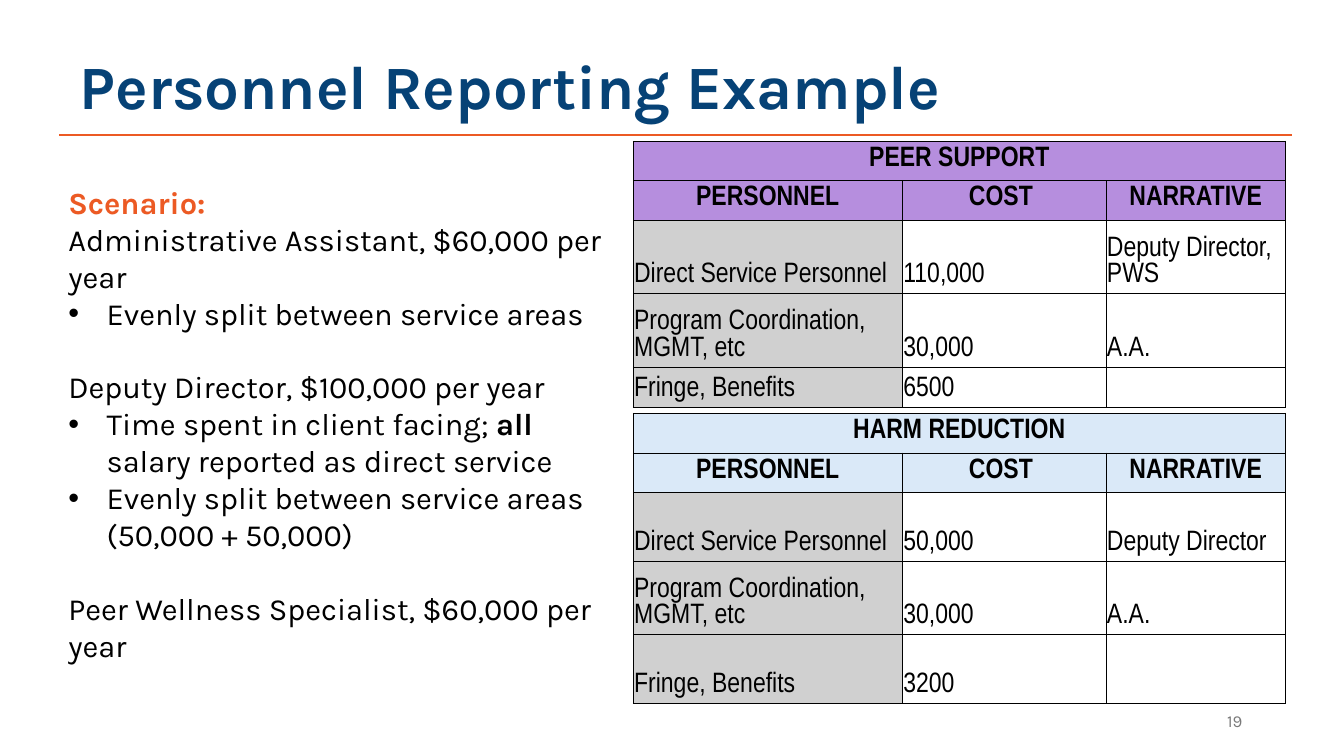
from dataclasses import dataclass

from lxml.etree import SubElement
from pptx import Presentation
from pptx.dml.color import RGBColor
from pptx.enum.shapes import MSO_CONNECTOR
from pptx.enum.text import MSO_ANCHOR, MSO_AUTO_SIZE, PP_ALIGN
from pptx.oxml.ns import qn
from pptx.util import Inches, Pt


@dataclass(frozen=True)
class Theme:
    navy: str = "064276"
    orange: str = "EC5A24"
    black: str = "000000"
    number_grey: str = "797979"
    label_grey: str = "D0D0D0"
    purple: str = "B68EDE"
    pale_blue: str = "DAE9F8"
    body_font: str = "Karla"
    table_font: str = "Arial Narrow"
    title_size: int = 44
    body_size: int = 22
    table_size: int = 20
    number_size: int = 12


@dataclass(frozen=True)
class ScenarioLine:
    text: str
    bullet: bool = False
    heading: bool = False
    starts_group: bool = False
    bold_word: str = ""


@dataclass(frozen=True)
class CostReport:
    service: str
    top: float
    header_color: str
    row_heights: tuple[float, ...]
    staff: tuple[tuple[str, str, str], ...]


THEME = Theme()
BULLET_INDENT = Inches(0.38)
REPORT_LEFT = Inches(6.28)
COLUMN_WIDTHS = (2.67, 2.02, 1.78)
COLUMN_HEADINGS = ("PERSONNEL", "COST ", "NARRATIVE")

SCENARIO = (
    ScenarioLine("Scenario:", heading=True),
    ScenarioLine("Administrative Assistant, $60,000 per year"),
    ScenarioLine("Evenly split between service areas", bullet=True),
    ScenarioLine("Deputy Director, $100,000 per year", starts_group=True),
    ScenarioLine("Time spent in client facing; all salary reported as direct service",
                 bullet=True, bold_word="all"),
    ScenarioLine("Evenly split between service areas (50,000 + 50,000)", bullet=True),
    ScenarioLine("Peer Wellness Specialist, $60,000 per year", starts_group=True),
)

REPORTS = (
    CostReport("PEER SUPPORT", 1.4, THEME.purple, (0.22, 0.22, 0.21, 0.4, 0.21), (
        ("Direct Service Personnel", "110,000", "Deputy Director, PWS"),
        ("Program Coordination, MGMT, etc", "30,000", "A.A."),
        ("Fringe, Benefits", "6500", ""),
    )),
    CostReport("HARM REDUCTION", 4.1, THEME.pale_blue, (0.37, 0.37, 0.68, 0.68, 0.68), (
        ("Direct Service Personnel", "50,000", "Deputy Director"),
        ("Program Coordination, MGMT, etc", "30,000", "A.A."),
        ("Fringe, Benefits", "3200", ""),
    )),
)


def write(paragraph, text: str, *, size: int, font: str = THEME.body_font,
          color: str = THEME.black, bold: bool = False, align=PP_ALIGN.LEFT) -> None:
    """Add one formatted run to a paragraph."""
    paragraph.alignment = align
    run = paragraph.add_run()
    run.text = text
    run.font.size = Pt(size)
    run.font.name = font
    run.font.bold = bold
    run.font.color.rgb = RGBColor.from_string(color)


def add_bullet(paragraph) -> None:
    properties = paragraph._p.get_or_add_pPr()
    properties.set("marL", str(BULLET_INDENT))
    properties.set("indent", str(-BULLET_INDENT))
    SubElement(properties, qn("a:buFont"), typeface="Arial")
    SubElement(properties, qn("a:buChar"), char="•")


def add_title(slide) -> None:
    title = slide.shapes.title
    title.left, title.top = Inches(0.69), Inches(0.44)
    title.width, title.height = Inches(10.94), Inches(0.9)
    frame = title.text_frame
    frame.vertical_anchor = MSO_ANCHOR.MIDDLE
    frame.paragraphs[0].line_spacing = 0.9
    write(frame.paragraphs[0], "Personnel Reporting Example",
          size=THEME.title_size, color=THEME.navy, bold=True)


def add_title_rule(slide) -> None:
    rule = slide.shapes.add_connector(MSO_CONNECTOR.STRAIGHT, Inches(0.59), Inches(1.34),
                                      Inches(12.81), Inches(1.34))
    rule.line.color.rgb = RGBColor.from_string(THEME.orange)
    rule.line.width = Pt(1)
    SubElement(rule._element.spPr, qn("a:effectLst"))


def add_scenario(slide) -> None:
    frame = slide.shapes.add_textbox(Inches(0.58), Inches(1.77),
                                     Inches(5.53), Inches(4.91)).text_frame
    frame.word_wrap = True
    frame.auto_size = MSO_AUTO_SIZE.SHAPE_TO_FIT_TEXT
    for index, line in enumerate(SCENARIO):
        paragraph = frame.add_paragraph() if index else frame.paragraphs[0]
        if line.starts_group:
            paragraph.space_before = Pt(26.4)
        if line.bullet:
            add_bullet(paragraph)
        parts = line.text.partition(line.bold_word) if line.bold_word else (line.text,)
        for part in parts:
            write(paragraph, part, size=THEME.body_size,
                  color=THEME.orange if line.heading else THEME.black,
                  bold=line.heading or part == line.bold_word)


def add_slide_number(slide) -> None:
    frame = slide.shapes.add_textbox(Inches(9.42), Inches(6.95),
                                     Inches(3), Inches(0.4)).text_frame
    frame.word_wrap = True
    frame.vertical_anchor = MSO_ANCHOR.MIDDLE
    write(frame.paragraphs[0], "19", size=THEME.number_size,
          color=THEME.number_grey, align=PP_ALIGN.RIGHT)


def set_fill_and_borders(cell, fill: str | None) -> None:
    properties = cell._tc.get_or_add_tcPr()
    for side in ("a:lnL", "a:lnR", "a:lnT", "a:lnB"):
        border = SubElement(properties, qn(side), w=str(Pt(0.5)))
        SubElement(SubElement(border, qn("a:solidFill")), qn("a:srgbClr"), val=THEME.black)
    if fill:
        cell.fill.solid()
        cell.fill.fore_color.rgb = RGBColor.from_string(fill)
    else:
        cell.fill.background()


def add_report(slide, report: CostReport) -> None:
    rows = ((report.service, "", ""), COLUMN_HEADINGS, *report.staff)
    table = slide.shapes.add_table(
        len(rows), len(COLUMN_WIDTHS), REPORT_LEFT, Inches(report.top),
        Inches(sum(COLUMN_WIDTHS)), Inches(sum(report.row_heights))).table
    table.first_row = table.horz_banding = False
    for column, width in zip(table.columns, COLUMN_WIDTHS):
        column.width = Inches(width)
    for row, height in zip(table.rows, report.row_heights):
        row.height = Inches(height)
    table.cell(0, 0).merge(table.cell(0, len(COLUMN_WIDTHS) - 1))

    for r, texts in enumerate(rows):
        is_header = r < 2
        for c, text in enumerate(texts):
            cell = table.cell(r, c)
            label_fill = THEME.label_grey if c == 0 else None
            set_fill_and_borders(cell, report.header_color if is_header else label_fill)
            if not text:
                continue
            cell.margin_left = cell.margin_right = cell.margin_top = Inches(0.01)
            cell.margin_bottom = Inches(0.05)
            cell.vertical_anchor = MSO_ANCHOR.MIDDLE if is_header else MSO_ANCHOR.BOTTOM
            write(cell.text_frame.paragraphs[0], text, size=THEME.table_size,
                  font=THEME.table_font, bold=is_header,
                  align=PP_ALIGN.CENTER if is_header else PP_ALIGN.LEFT)


def main() -> None:
    deck = Presentation()
    deck.slide_width, deck.slide_height = Inches(13.33), Inches(7.5)
    slide = deck.slides.add_slide(deck.slide_layouts.get_by_name("Title Only"))
    add_title_rule(slide)
    add_title(slide)
    add_scenario(slide)
    add_slide_number(slide)
    for report in REPORTS:
        add_report(slide, report)
    deck.save("out.pptx")


if __name__ == "__main__":
    main()
